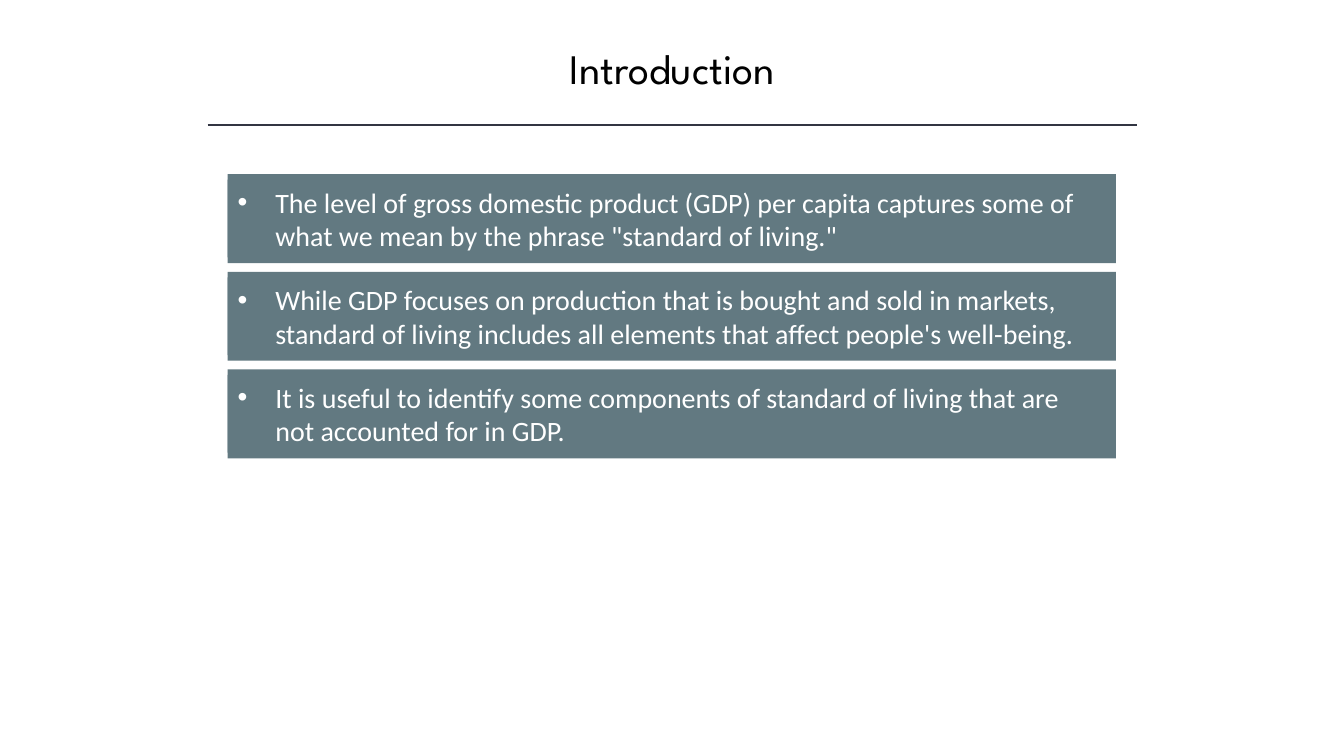
from dataclasses import dataclass

from lxml.etree import SubElement
from pptx import Presentation
from pptx.dml.color import RGBColor
from pptx.enum.shapes import MSO_CONNECTOR, MSO_SHAPE
from pptx.enum.text import MSO_ANCHOR as Anchor, MSO_AUTO_SIZE as AutoSize, PP_ALIGN as Align
from pptx.oxml.ns import qn
from pptx.shapes.autoshape import Shape
from pptx.slide import Slide
from pptx.util import Cm, Pt

COLORS = {"title": "000000", "rule": "323542", "card": "627981", "text": "FFFFFF"}

CARD_LEFT, CARD_TOP, CARD_WIDTH, CARD_HEIGHT = 5.74, 4.39, 22.38, 2.24
CARD_PITCH = 2.46
TEXT_INSET, TEXT_HEIGHT = 0.14, 1.96
BULLET_INDENT = 0.95


@dataclass
class Card:
    text: str
    text_width: float = 21.69


CARDS = [
    Card("The level of gross domestic product (GDP) per capita captures some of "
         "what we mean by the phrase \"standard of living.\"", 22.12),
    Card("While GDP focuses on production that is bought and sold in markets, "
         "standard of living includes all elements that affect people's well-being."),
    Card("It is useful to identify some components of standard of living that are "
         "not accounted for in GDP."),
]


def write(sp: Shape, text: str, *, font: str, size: float, color: str,
          align: Align = Align.LEFT, anchor: Anchor = Anchor.MIDDLE,
          bullet: bool = False) -> None:
    tf = sp.text_frame
    tf.word_wrap = True
    tf.auto_size = AutoSize.NONE
    tf.vertical_anchor = anchor
    p = tf.paragraphs[0]
    p.alignment = align
    if bullet:
        pPr = p._p.get_or_add_pPr()
        pPr.set("marL", str(Cm(BULLET_INDENT)))
        pPr.set("indent", str(-Cm(BULLET_INDENT)))
        SubElement(pPr, qn("a:buFont"), typeface="Arial")
        SubElement(pPr, qn("a:buChar"), char="•")
    r = p.add_run()
    r.text = text
    r.font.name = font
    r.font.size = Pt(size)
    r.font.color.rgb = RGBColor.from_string(COLORS[color])


def add_block(s: Slide, left: float, top: float, width: float, height: float) -> Shape:
    sp = s.shapes.add_shape(MSO_SHAPE.RECTANGLE, Cm(left), Cm(top), Cm(width), Cm(height))
    sp.shadow.inherit = False
    sp.fill.solid()
    sp.fill.fore_color.rgb = RGBColor.from_string(COLORS["card"])
    sp.line.fill.background()
    return sp


def add_card(s: Slide, card: Card, top: float) -> None:
    add_block(s, CARD_LEFT, top, CARD_WIDTH, CARD_HEIGHT)
    sp = add_block(s, CARD_LEFT, top + TEXT_INSET, card.text_width, TEXT_HEIGHT)
    write(sp, card.text, font="Calibri", size=20, color="text", bullet=True)


def main() -> None:
    prs = Presentation()
    prs.slide_width, prs.slide_height = Cm(33.87), Cm(19.05)
    s = prs.slides.add_slide(prs.slide_layouts[5])

    # Title
    title = s.shapes.title
    title.left, title.top, title.width, title.height = Cm(4.24), Cm(0.94), Cm(25.4), Cm(1.55)
    write(title, "Introduction", font="League Spartan", size=30, color="title",
          align=Align.CENTER, anchor=Anchor.TOP)

    # Rule under the title
    rule = s.shapes.add_connector(MSO_CONNECTOR.STRAIGHT, Cm(5.23), Cm(3.15), Cm(28.65), Cm(3.15))
    rule.line.color.rgb = RGBColor.from_string(COLORS["rule"])
    rule.line.width = Pt(1)
    SubElement(rule._element.spPr, qn("a:effectLst"))

    # Statement cards
    for i, card in enumerate(CARDS):
        add_card(s, card, CARD_TOP + i * CARD_PITCH)

    prs.save("out.pptx")


if __name__ == "__main__":
    main()
